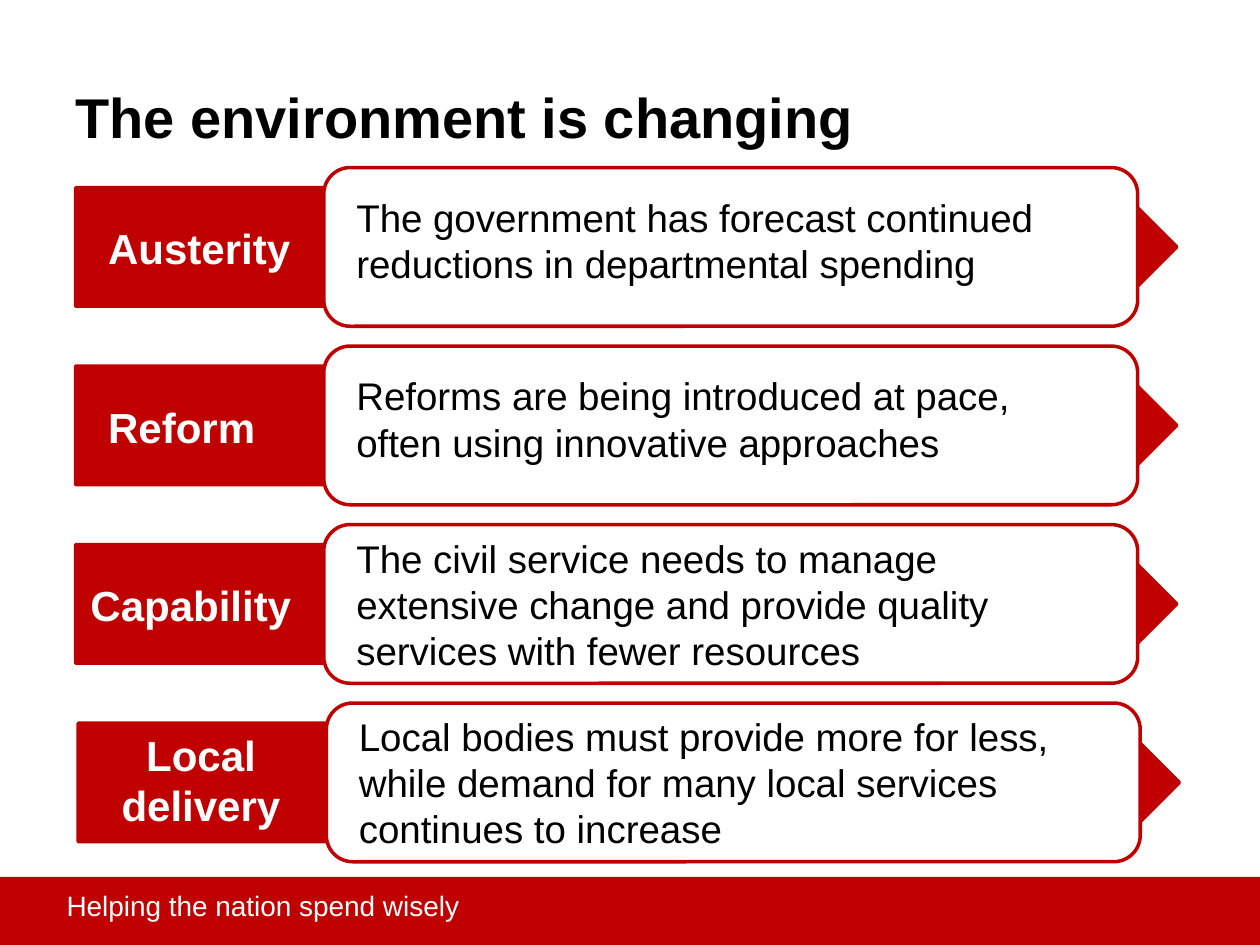
from pptx import Presentation
from pptx.dml.color import RGBColor
from pptx.enum.shapes import MSO_SHAPE
from pptx.enum.text import MSO_ANCHOR, PP_ALIGN
from pptx.util import Inches, Pt

RECT = MSO_SHAPE.RECTANGLE
ARROW = MSO_SHAPE.PENTAGON
ROUNDED = MSO_SHAPE.ROUNDED_RECTANGLE
LEFT, CENTER = PP_ALIGN.LEFT, PP_ALIGN.CENTER
TOP, MIDDLE = MSO_ANCHOR.TOP, MSO_ANCHOR.MIDDLE


def rgb(value):
    return RGBColor.from_string(value)


class Deck:
    font = "Arial"
    red, white, black = "C00000", "FFFFFF", "000000"

    def __init__(self, width, height):
        self.prs = Presentation()
        self.prs.slide_width, self.prs.slide_height = Inches(width), Inches(height)
        self.s = self.prs.slides.add_slide(self.prs.slide_layouts[6])
        self.shapes = self.s.shapes

    def group(self):
        """Send the elements that follow into a new group."""
        self.shapes = self.s.shapes.add_group_shape().shapes

    def shape(self, kind, x, y, w, h, fill, line=None):
        sp = self.shapes.add_shape(kind, Inches(x), Inches(y), Inches(w), Inches(h))
        sp.shadow.inherit = False
        sp.fill.solid()
        sp.fill.fore_color.rgb = rgb(fill)
        if line:
            sp.line.color.rgb = rgb(line)
            sp.line.width = Pt(2)
        else:
            sp.line.fill.background()

    def text(self, x, y, w, h, text, size, color, bold=False,
             align=LEFT, anchor=TOP, after=0):
        tb = self.shapes.add_textbox(Inches(x), Inches(y), Inches(w), Inches(h))
        tf = tb.text_frame
        tf.word_wrap = True
        tf.vertical_anchor = anchor
        p = tf.paragraphs[0]
        p.alignment = align
        p.space_after = Pt(after)
        r = p.add_run()
        r.text = text
        r.font.name = self.font
        r.font.size = Pt(size)
        r.font.bold = bold
        r.font.color.rgb = rgb(color)


# Per row: left edge, label, label left, top offset and width, alignment,
# statement, statement top offset and height
ROWS = [
    (0.6, "Austerity", 0.16, 0.23, 1.65, LEFT,
     "The government has forecast continued reductions in departmental spending",
     0, 0.84),
    (0.6, "Reform", 0.16, 0.23, 1.65, LEFT,
     "Reforms are being introduced at pace, often using innovative approaches",
     0, 0.84),
    (0.6, "Capability", 0.02, 0.23, 1.8, LEFT,
     "The civil service needs to manage extensive change and provide quality "
     "services with fewer resources", -0.13, 1.21),
    (0.62, "Local delivery", 0.15, 0, 1.65, CENTER,
     "Local bodies must provide more for less, while demand for many local "
     "services continues to increase", -0.13, 1.21),
]
FIRST_TOP, LAST_TOP = 1.49, 5.74
PITCH = (LAST_TOP - FIRST_TOP) / (len(ROWS) - 1)


def main():
    d = Deck(10, 7.5)

    # Footer band
    d.shape(RECT, 0, 6.96, 10, 0.57, d.red)
    d.text(0.43, 7, 7.8, 0.37, "Helping the nation spend wisely", 16, d.white)

    # Title
    d.text(0.5, 0.3, 8.99, 1.25, "The environment is changing", 32, d.black,
           bold=True, anchor=MIDDLE)

    # Arrow rows, each with a label and a statement
    for i, (x, label, dx, dy, w, align, statement, sy, sh) in enumerate(ROWS):
        y = FIRST_TOP + i * PITCH
        d.group()
        d.shape(ARROW, x, y, 8.74, 0.94, d.red, d.red)
        d.shape(ROUNDED, x + 1.97, y - 0.16, 6.46, 1.26, d.white, d.red)
        d.text(x + dx, y + dy, w, 0.94 - 2 * dy, label, 24, d.white,
               bold=True, align=align)
        d.text(x + 2.13, y + sy, 6.06, sh, statement, 22, d.black, after=6)

    d.prs.save("out.pptx")


if __name__ == "__main__":
    main()
